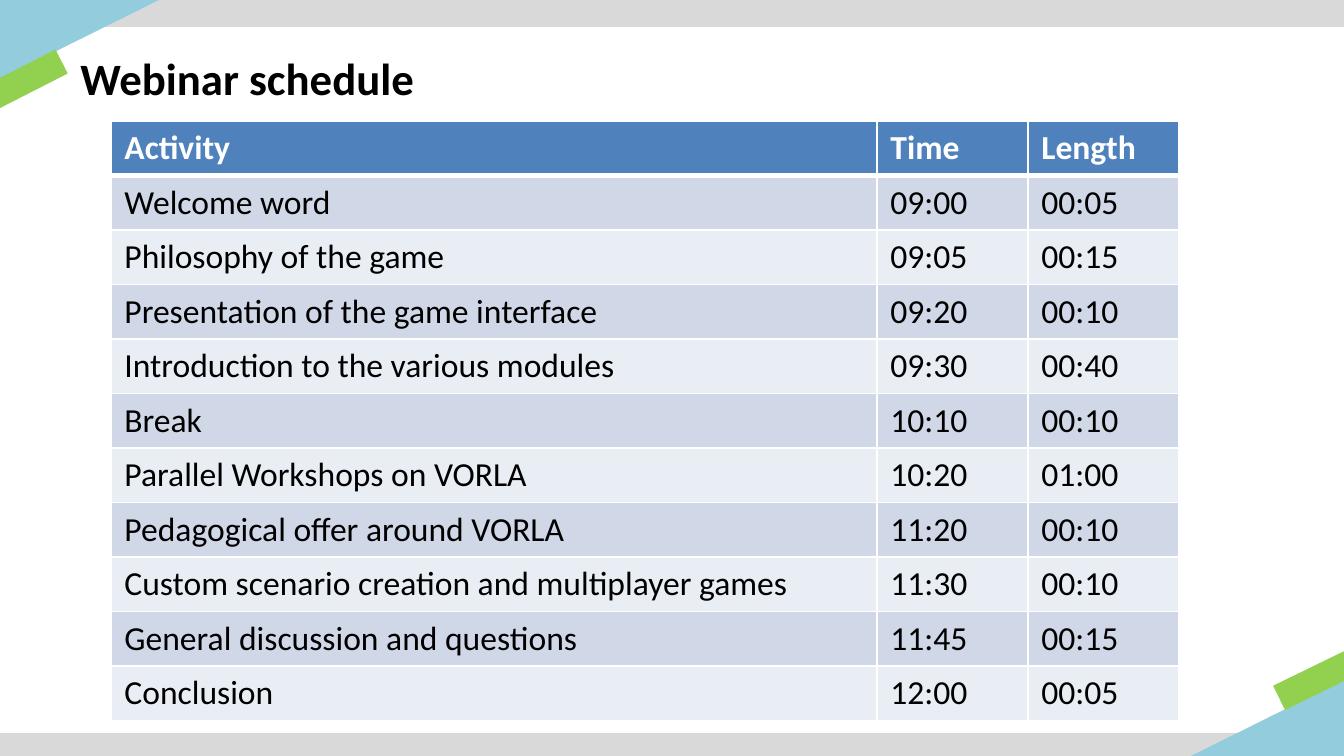
import dataclasses

import lxml.etree
import pptx
import pptx.dml.color
import pptx.enum.shapes
import pptx.enum.text
import pptx.oxml.ns
import pptx.util

SHAPES = pptx.enum.shapes.MSO_SHAPE
EMU_PER_PX = 914400 / 134.4


@dataclasses.dataclass(frozen=True)
class Theme:
    font: str = "Calibri"
    title_size: int = 24
    table_size: int = 18
    text: str = "000000"
    white: str = "FFFFFF"
    bar: str = "D9D9D9"
    corner: str = "93CDDD"
    accent: str = "92D050"
    header: str = "4F81BD"
    bands: tuple = ("D0D8E8", "E9EDF4")


def px(length):
    return pptx.util.Emu(round(length * EMU_PER_PX))


def rgb(color):
    return pptx.dml.color.RGBColor.from_string(color)


class SlideBuilder:
    """Draws styled elements on the current slide."""

    def __init__(self, page, theme):
        self.page = page
        self.theme = theme

    def style_text(self, frame, size, color, bold):
        for para in frame.paragraphs:
            for span in para.runs:
                span.font.name = self.theme.font
                span.font.size = pptx.util.Pt(size)
                span.font.bold = bold
                span.font.color.rgb = rgb(color)

    def shape(self, kind, left, top, width, height, color, rotation=0):
        shape = self.page.shapes.add_shape(kind, px(left), px(top), px(width), px(height))
        shape.shadow.inherit = False
        shape.fill.solid()
        shape.fill.fore_color.rgb = rgb(color)
        shape.line.fill.background()
        shape.rotation = rotation
        return shape

    def corner(self, left, top, rotation):
        triangle = self.shape(SHAPES.ISOSCELES_TRIANGLE, left, top, 79, 159,
                              self.theme.corner, rotation)
        triangle.adjustments[0] = 0

    def title(self, text, left, top, width, height):
        box = self.page.shapes.title
        box.left, box.top, box.width, box.height = map(px, (left, top, width, height))
        frame = box.text_frame
        frame.text = text
        frame.vertical_anchor = pptx.enum.text.MSO_ANCHOR.MIDDLE
        frame.paragraphs[0].alignment = pptx.enum.text.PP_ALIGN.LEFT
        self.style_text(frame, self.theme.title_size, self.theme.text, True)

    def borders(self, cell, widths):
        properties = cell._tc.get_or_add_tcPr()
        for index, (side, width) in enumerate(widths.items()):
            line = lxml.etree.Element(pptx.oxml.ns.qn(f"a:ln{side}"), w=str(pptx.util.Pt(width)))
            fill = lxml.etree.SubElement(line, pptx.oxml.ns.qn("a:solidFill"))
            lxml.etree.SubElement(fill, pptx.oxml.ns.qn("a:srgbClr"), val=self.theme.white)
            properties.insert(index, line)

    def table(self, rows, left, top, column_widths, row_height):
        frame = self.page.shapes.add_table(
            len(rows), len(column_widths), px(left), px(top),
            px(sum(column_widths)), px(row_height * len(rows)))
        table = frame.table
        for column, width in zip(table.columns, column_widths):
            column.width = px(width)
        for row_index, values in enumerate(rows):
            table.rows[row_index].height = px(row_height)
            is_header = row_index == 0
            fill = self.theme.header if is_header else self.theme.bands[(row_index - 1) % 2]
            color = self.theme.white if is_header else self.theme.text
            widths = {"L": 1, "R": 1, "T": 3 if row_index == 1 else 1, "B": 3 if is_header else 1}
            for column_index, value in enumerate(values):
                cell = table.cell(row_index, column_index)
                cell.text_frame.text = value
                self.style_text(cell.text_frame, self.theme.table_size, color, is_header)
                cell.fill.solid()
                cell.fill.fore_color.rgb = rgb(fill)
                self.borders(cell, widths)


SCHEDULE = [
    ("Activity", "Time", "Length"),
    ("Welcome word", "09:00", "00:05"),
    ("Philosophy of the game", "09:05", "00:15"),
    ("Presentation of the game interface", "09:20", "00:10"),
    ("Introduction to the various modules", "09:30", "00:40"),
    ("Break", "10:10", "00:10"),
    ("Parallel Workshops on VORLA", "10:20", "01:00"),
    ("Pedagogical offer around VORLA", "11:20", "00:10"),
    ("Custom scenario creation and multiplayer games", "11:30", "00:10"),
    ("General discussion and questions", "11:45", "00:15"),
    ("Conclusion", "12:00", "00:05"),
]


def main():
    deck = pptx.Presentation()
    deck.slide_width, deck.slide_height = px(1344), px(756)
    theme = Theme()
    builder = SlideBuilder(deck.slides.add_slide(deck.slide_layouts[5]), theme)

    builder.shape(SHAPES.RECTANGLE, 0, 0, 1344, 27, theme.bar)
    builder.corner(40, -40, 90)
    builder.shape(SHAPES.RECTANGLE, -13, 66, 79, 27, theme.accent, 333)
    builder.shape(SHAPES.RECTANGLE, 0, 733, 1344, 27, theme.bar)
    builder.corner(1225, 640, 270)
    builder.shape(SHAPES.RECTANGLE, 1275, 667, 79, 27, theme.accent, 154)

    builder.title("Webinar schedule", 67, 31, 1210, 94)
    builder.table(SCHEDULE, 111, 121, (766, 151, 151), 54)
    deck.save("out.pptx")


if __name__ == "__main__":
    main()
